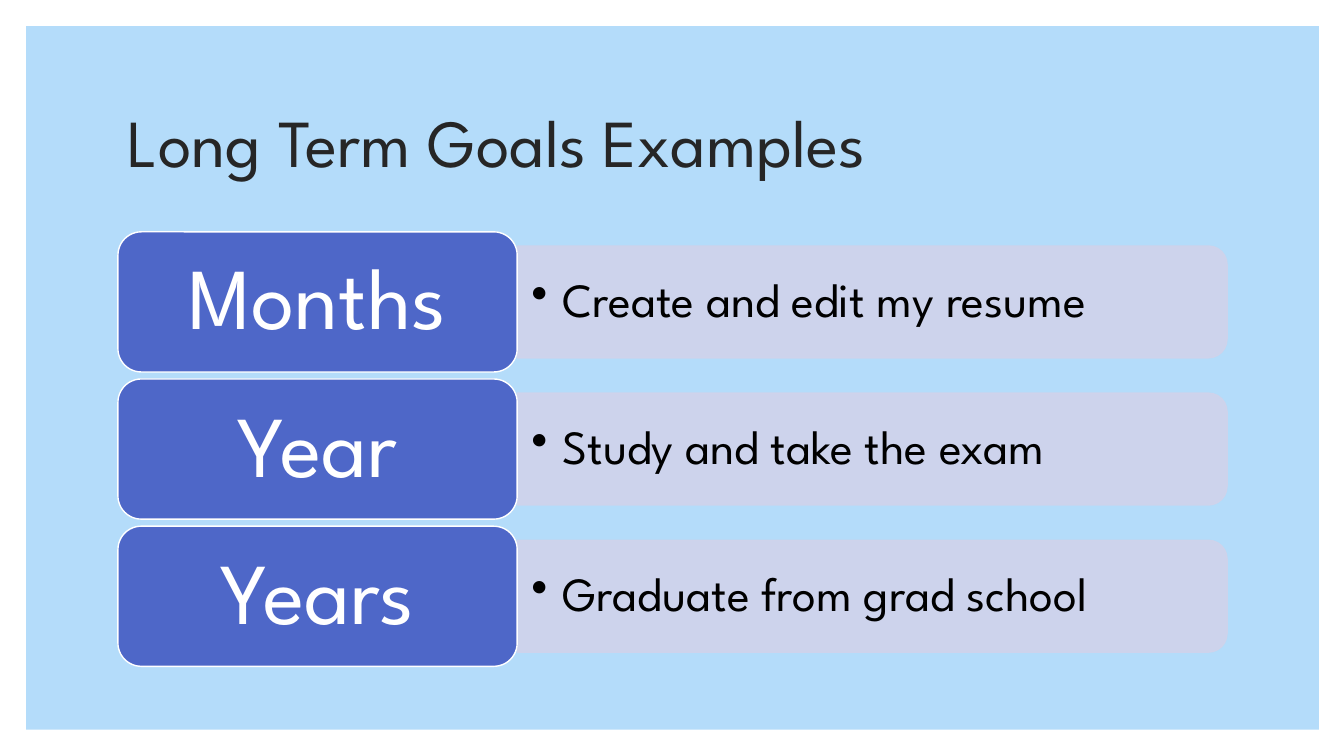
from dataclasses import dataclass

from lxml import etree
from pptx import Presentation
from pptx.dml.color import RGBColor
from pptx.enum import shapes as sh, text as tx
from pptx.oxml.ns import qn
from pptx.util import Inches, Pt


@dataclass(frozen=True)
class Theme:
    face: str = "League Spartan"
    panel: str = "B4DCFA"
    card: str = "4E67C8"
    bar: str = "D0D3EB"
    white: str = "FFFFFF"
    dark: str = "262626"
    black: str = "000000"
    title: int = 48
    label: int = 62
    body: int = 34


@dataclass(frozen=True)
class Goal:
    term: str
    task: str


THEME = Theme()
GOALS = [
    Goal("Months", "Create and edit my resume"),
    Goal("Year", "Study and take the exam"),
    Goal("Years", "Graduate from grad school"),
]

# Row layout in inches
LEFT, TOP = 1.17, 2.3
CARD_W, CARD_H, GAP = 3.96, 1.39, 0.07
BAR_W, BAR_H = 7.04, 1.11
TEXT_W, TEXT_H = 6.99, 1.0


def add_shape(slide, kind, x: float, y: float, w: float, h: float,
              fill: str, line: str | None = None):
    shape = slide.shapes.add_shape(kind, Inches(x), Inches(y), Inches(w), Inches(h))
    shape.shadow.inherit = False
    shape.fill.solid()
    shape.fill.fore_color.rgb = RGBColor.from_string(fill)
    if line:
        shape.line.color.rgb = RGBColor.from_string(line)
        shape.line.width = Pt(1)
    else:
        shape.line.fill.background()
    return shape


def add_box(slide, x: float, y: float, w: float, h: float):
    return slide.shapes.add_textbox(Inches(x), Inches(y), Inches(w), Inches(h))


def write(shape, words: str, size: int, color: str, pad: tuple[float, float],
          align=tx.PP_ALIGN.LEFT, bullet: bool = False) -> None:
    frame = shape.text_frame
    frame.word_wrap = True
    frame.vertical_anchor = tx.MSO_ANCHOR.MIDDLE
    frame.margin_left = frame.margin_right = Inches(pad[0])
    frame.margin_top = frame.margin_bottom = Inches(pad[1])
    para = frame.paragraphs[0]
    para.text = words
    para.alignment = align
    para.line_spacing = 0.9
    if bullet:
        props = para._p.get_or_add_pPr()
        props.set("marL", str(Inches(0.31)))
        props.set("indent", str(-Inches(0.31)))
        etree.SubElement(props, qn("a:buChar"), char="•")
    para.font.name = THEME.face
    para.font.size = Pt(size)
    para.font.color.rgb = RGBColor.from_string(color)


def fade(shape, share: int) -> None:
    """Set the opacity of fill and line in percent."""
    for tint in shape._element.spPr.iter(qn("a:srgbClr")):
        etree.SubElement(tint, qn("a:alpha"), val=str(share * 1000))


def add_row(slide, goal: Goal, top: float) -> None:
    mid = top + CARD_H / 2
    edge = LEFT + CARD_W

    # Bar, turned so that its round corners face right
    bar = add_shape(slide, sh.MSO_SHAPE.ROUND_2_SAME_RECTANGLE,
                    edge + (BAR_W - BAR_H) / 2, mid - BAR_W / 2,
                    BAR_H, BAR_W, THEME.bar, THEME.bar)
    bar.rotation = 90
    fade(bar, 90)
    task = add_box(slide, edge, mid - TEXT_H / 2, TEXT_W, TEXT_H)
    write(task, goal.task, THEME.body, THEME.black, (0.14, 0.07), bullet=True)

    # Card with the time span
    card = add_shape(slide, sh.MSO_SHAPE.ROUNDED_RECTANGLE,
                     LEFT, top, CARD_W, CARD_H, THEME.card, THEME.white)
    write(card, goal.term, THEME.label, THEME.white, (0.26, 0.13),
          tx.PP_ALIGN.CENTER)


def main() -> None:
    deck = Presentation()
    deck.slide_width, deck.slide_height = Inches(13.33), Inches(7.5)
    slide = deck.slides.add_slide(deck.slide_layouts[6])

    # Panel and title
    add_shape(slide, sh.MSO_SHAPE.RECTANGLE, 0.26, 0.26, 12.82, 6.98, THEME.panel)
    title = add_box(slide, LEFT, 0.7, 11, 1.5)
    write(title, "Long Term Goals Examples", THEME.title, THEME.dark, (0.1, 0.05))

    # Goal rows
    for i, goal in enumerate(GOALS):
        add_row(slide, goal, TOP + i * (CARD_H + GAP))

    deck.save("out.pptx")


if __name__ == "__main__":
    main()
